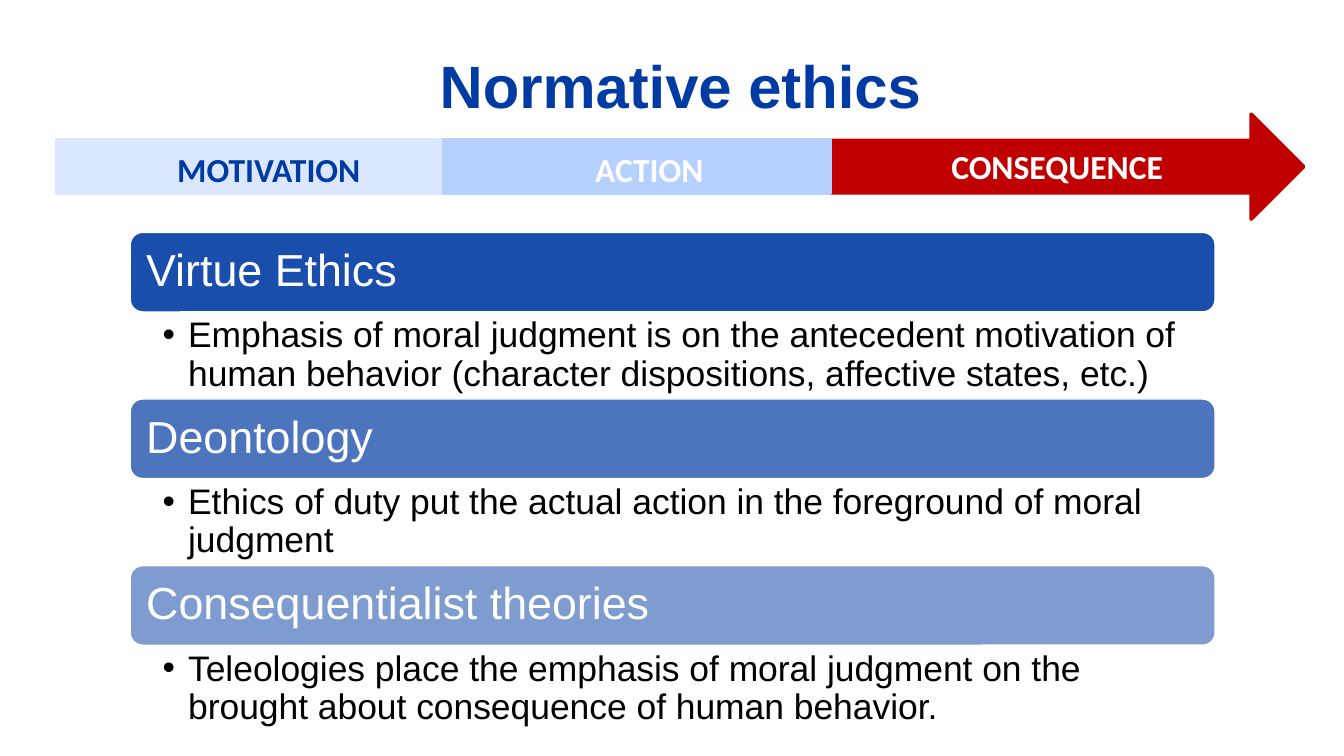
from lxml import etree
from pptx import Presentation
from pptx.dml.color import RGBColor
from pptx.enum.shapes import MSO_SHAPE
from pptx.enum.text import MSO_ANCHOR, MSO_AUTO_SIZE, PP_ALIGN
from pptx.oxml.ns import qn
from pptx.util import Pt

TITLE_ONLY = 5
RECTANGLE = MSO_SHAPE.RECTANGLE
ROUNDED = MSO_SHAPE.ROUNDED_RECTANGLE
ARROW = MSO_SHAPE.RIGHT_ARROW
TOP, MIDDLE = MSO_ANCHOR.TOP, MSO_ANCHOR.MIDDLE
LEFT, CENTER = PP_ALIGN.LEFT, PP_ALIGN.CENTER

PX = 9144  # 100 px to the inch
SLIDE_WIDTH = 1000
COLORS = {
    "blue": "003BA3",
    "light": "DAE7FF",
    "medium": "B6D0FF",
    "red": "C00000",
    "white": "FFFFFF",
    "black": "000000",
}

TITLE = "Normative ethics"
STAGES = ["light", "medium"]
# text, colour, box
LABELS = [
    ("MOTIVATION", "blue", (122, 106, 161, 40)),
    ("ACTION", "white", (433, 106, 102, 40)),
    ("CONSEQUENCE", "white", (698, 104, 180, 40)),
]
# heading, opacity in percent, explanation
THEORIES = [
    ("Virtue Ethics", 90,
     "Emphasis of moral judgment is on the antecedent motivation of human "
     "behavior (character dispositions, affective states, etc.)"),
    ("Deontology", 70,
     "Ethics of duty put the actual action in the foreground of moral judgment"),
    ("Consequentialist theories", 50,
     "Teleologies place the emphasis of moral judgment on the brought about "
     "consequence of human behavior."),
]

TITLE_BOX = (66, 31, 881, 64)
ARROW_BOX = (43, 85, 927, 78)
STAGE_LEFT, STAGE_TOP, STAGE_WIDTH, STAGE_HEIGHT = 42, 104, 288, 40
THEORY_LEFT, THEORY_TOP, THEORY_WIDTH = 96, 172, 809
HEADING_HEIGHT, BODY_HEIGHT, THEORY_PITCH = 61, 62, 124


def color(name):
    return RGBColor.from_string(COLORS[name])


def emu(box):
    return [value * PX for value in box]


def add_block(slide, kind, box, fill, line, opacity=100):
    shape = slide.shapes.add_shape(kind, *emu(box))
    shape.shadow.inherit = False
    shape.fill.solid()
    shape.fill.fore_color.rgb = color(fill)
    shape.line.color.rgb = color(line)
    shape.line.width = Pt(2)
    if opacity < 100:
        fill_color = shape._element.spPr.find(qn("a:solidFill"))[0]
        etree.SubElement(fill_color, qn("a:alpha"), val=str(opacity * 1000))
    return shape


def write(shape, text, size, ink, font="Arial", bold=False, align=LEFT,
          anchor=TOP, insets=(10, 5, 10, 5), spacing=1.0, wrap=True):
    frame = shape.text_frame
    frame.word_wrap = wrap
    frame.auto_size = MSO_AUTO_SIZE.NONE
    frame.vertical_anchor = anchor
    (frame.margin_left, frame.margin_top,
     frame.margin_right, frame.margin_bottom) = emu(insets)
    paragraph = frame.paragraphs[0]
    paragraph.alignment = align
    paragraph.line_spacing = spacing
    run = paragraph.add_run()
    run.text = text
    run.font.name = font
    run.font.size = Pt(size)
    run.font.bold = bold
    run.font.color.rgb = color(ink)
    return paragraph


def add_bullet(paragraph, indent, ink):
    properties = paragraph._p.get_or_add_pPr()
    properties.set("marL", str(indent * PX))
    properties.set("indent", str(-indent * PX))
    bullet_color = etree.SubElement(properties, qn("a:buClr"))
    etree.SubElement(bullet_color, qn("a:srgbClr"), val=COLORS[ink])
    etree.SubElement(properties, qn("a:buFont"), typeface="Arial")
    etree.SubElement(properties, qn("a:buChar"), char="•")


def add_theories(slide):
    for index, (heading, opacity, explanation) in enumerate(THEORIES):
        top = THEORY_TOP + index * THEORY_PITCH
        bar = add_block(slide, ROUNDED,
                        (THEORY_LEFT, top, THEORY_WIDTH, HEADING_HEIGHT),
                        "blue", "white", opacity)
        write(bar, heading, 24, "white", anchor=MIDDLE,
              insets=(10, 10, 10, 10), spacing=0.9)
        body = slide.shapes.add_textbox(*emu(
            (THEORY_LEFT, top + HEADING_HEIGHT, THEORY_WIDTH, BODY_HEIGHT)))
        paragraph = write(body, explanation, 19, "black",
                          insets=(25, 3, 19, 3), spacing=0.9)
        add_bullet(paragraph, 19, "black")


def add_timeline(slide):
    add_block(slide, ARROW, ARROW_BOX, "red", "red")
    for index, shade in enumerate(STAGES):
        left = STAGE_LEFT + index * STAGE_WIDTH
        add_block(slide, RECTANGLE,
                  (left, STAGE_TOP, STAGE_WIDTH, STAGE_HEIGHT), shade, shade)
    for text, ink, box in LABELS:
        label = slide.shapes.add_textbox(*emu(box))
        write(label, text, 18, ink, font="Calibri", bold=True, wrap=False)


def main():
    presentation = Presentation()
    presentation.slide_width = SLIDE_WIDTH * PX
    presentation.slide_height = SLIDE_WIDTH * PX * 9 // 16
    slide = presentation.slides.add_slide(presentation.slide_layouts[TITLE_ONLY])
    title = slide.shapes.title
    title.left, title.top, title.width, title.height = emu(TITLE_BOX)
    write(title, TITLE, 32, "blue", bold=True, align=CENTER)
    add_theories(slide)
    add_timeline(slide)
    presentation.save("out.pptx")


if __name__ == "__main__":
    main()
